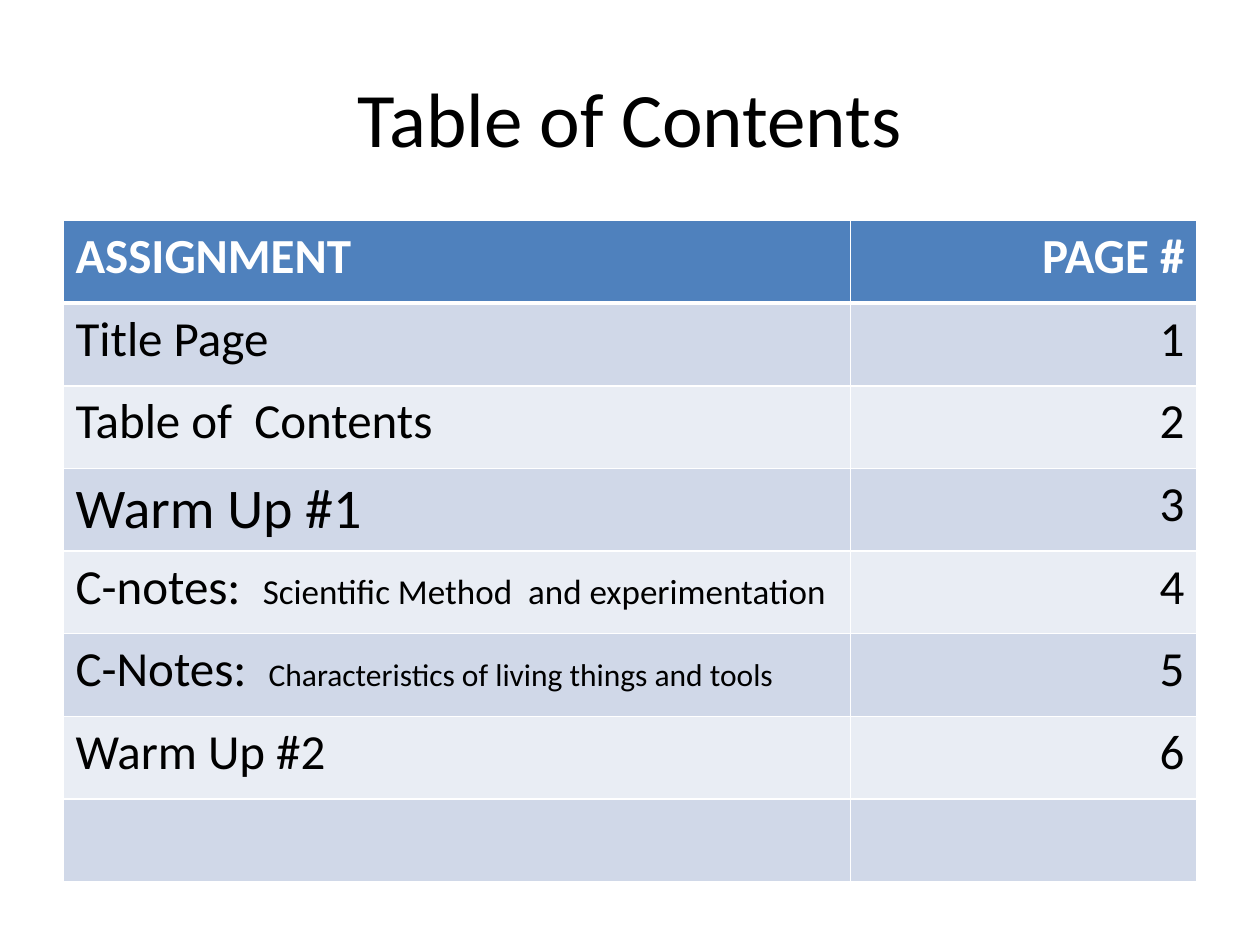
from dataclasses import dataclass

from lxml.etree import SubElement
from pptx import Presentation
from pptx.dml.color import RGBColor
from pptx.enum.text import MSO_ANCHOR as Anchor, PP_ALIGN as Align
from pptx.oxml.ns import qn
from pptx.slide import Slide
from pptx.util import Inches, Pt

WIDTH, HEIGHT = 10, 7.5
ENTRIES = [
    [("Title Page", 28)],
    [("Table of  Contents", 28)],
    [("Warm Up #1", 32)],
    [("C-notes:  ", 28), ("Scientific Method  and experimentation", 20)],
    [("C-Notes:  ", 28), ("Characteristics of living things and tools", 18)],
    [("Warm Up #2", 28)],
]


def color(value):
    """Turn a hex string into a colour."""
    return RGBColor.from_string(value)


@dataclass
class ContentsSlide:
    """Style and drawing methods for the current slide."""

    slide: Slide
    font: str = "Calibri"
    ink: str = "000000"
    paper: str = "FFFFFF"
    header: str = "4F81BD"
    bands: tuple = ("D0D8E8", "E9EDF4")

    def add_runs(self, paragraph, pieces, align, ink, bold=False):
        """Add (text, size) pieces as the runs of a paragraph."""
        paragraph.alignment = align
        for text, size in pieces:
            run = paragraph.add_run()
            run.text = text
            run.font.name, run.font.size, run.font.bold = self.font, Pt(size), bold
            run.font.color.rgb = color(ink)

    def title(self, text, left, top, width, height):
        """Add a centred title placed by shares of the slide."""
        box = self.slide.shapes.add_textbox(
            Inches(left * WIDTH), Inches(top * HEIGHT),
            Inches(width * WIDTH), Inches(height * HEIGHT))
        frame = box.text_frame
        frame.word_wrap = True
        frame.vertical_anchor = Anchor.MIDDLE
        self.add_runs(frame.paragraphs[0], [(text, 44)], Align.CENTER, self.ink)

    def borders(self, cell, top, bottom):
        """Draw the four cell borders with the given top and bottom widths."""
        properties = cell._tc.get_or_add_tcPr()
        for side, points in (("L", 1), ("R", 1), ("T", top), ("B", bottom)):
            line = SubElement(properties, qn(f"a:ln{side}"), w=str(Pt(points)))
            fill = SubElement(line, qn("a:solidFill"))
            SubElement(fill, qn("a:srgbClr"), val=self.paper)

    def table(self, rows, left, top, shares, height):
        """Add a banded table with a header row, placed by shares of the slide."""
        table = self.slide.shapes.add_table(
            len(rows), len(shares), Inches(left * WIDTH), Inches(top * HEIGHT),
            Inches(sum(shares) * WIDTH), Inches(height * HEIGHT)).table
        for column, share in zip(table.columns, shares):
            column.width = Inches(share * WIDTH)
        for index, row in enumerate(rows):
            heading = index == 0
            fill = self.header if heading else self.bands[(index - 1) % 2]
            ink = self.paper if heading else self.ink
            for number, pieces in enumerate(row):
                cell = table.cell(index, number)
                self.borders(cell, 3 if index == 1 else 1, 3 if heading else 1)
                cell.fill.solid()
                cell.fill.fore_color.rgb = color(fill)
                align = Align.RIGHT if number else Align.LEFT
                self.add_runs(cell.text_frame.paragraphs[0], pieces, align, ink, heading)


def main():
    """Build and save the contents slide."""
    deck = Presentation()
    deck.slide_width, deck.slide_height = Inches(WIDTH), Inches(HEIGHT)
    page = ContentsSlide(deck.slides.add_slide(deck.slide_layouts[6]))
    page.title("Table of Contents", 0.05, 0.04, 0.9, 1 / 6)
    numbered = [[entry, [(str(number), 28)]] for number, entry in enumerate(ENTRIES, 1)]
    headings = [[("ASSIGNMENT", 28)], [("PAGE #", 28)]]
    page.table([headings, *numbered, [[], []]], 0.05, 7 / 30, (0.625, 0.275), 0.7)
    deck.save("out.pptx")


if __name__ == "__main__":
    main()
